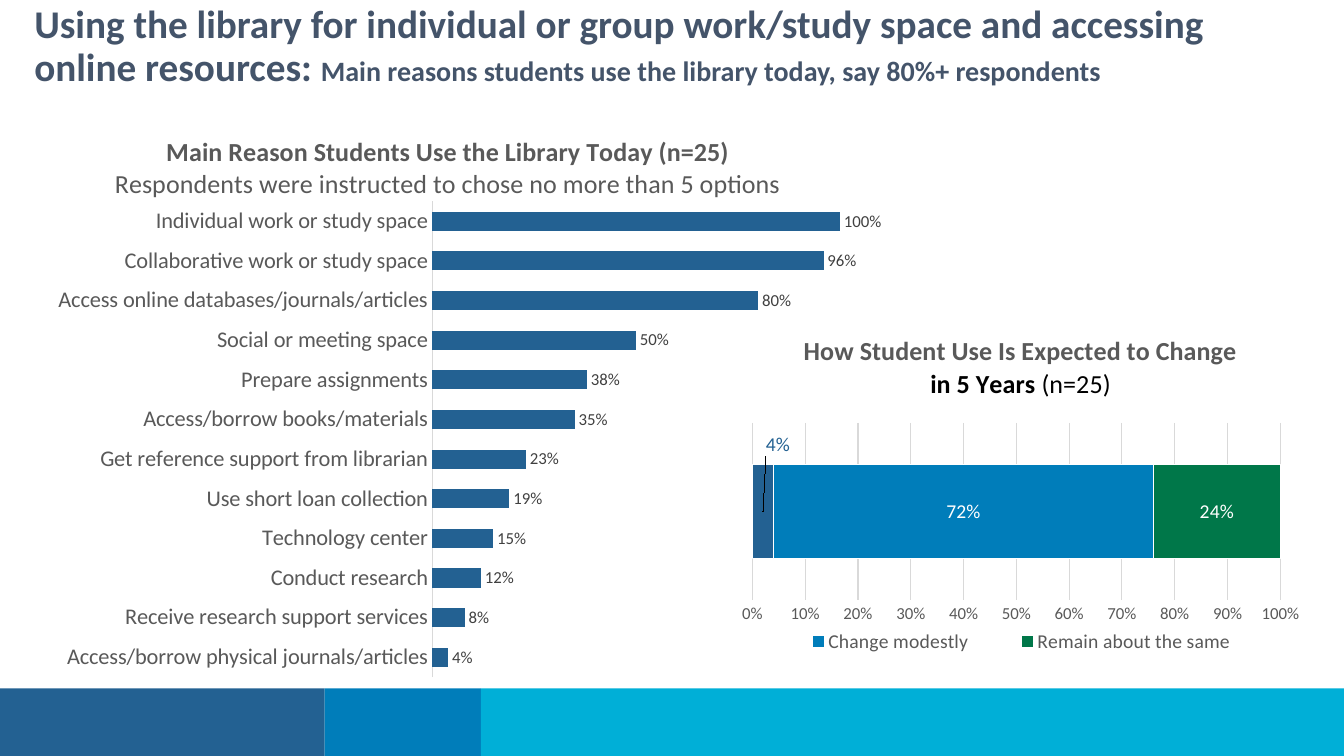
from lxml import etree
from pptx import Presentation
from pptx.chart.data import CategoryChartData
from pptx.dml.color import RGBColor
from pptx.enum.chart import XL_CHART_TYPE as ChartType, XL_LABEL_POSITION as LabelPosition
from pptx.enum.chart import XL_LEGEND_POSITION as LegendPosition, XL_TICK_MARK as TickMark
from pptx.enum.shapes import MSO_SHAPE as Shape
from pptx.enum.text import MSO_ANCHOR as Anchor, MSO_AUTO_SIZE as AutoSize, PP_ALIGN as Align
from pptx.oxml.ns import qn
from pptx.util import Inches, Pt


class Theme:
    font = "Calibri"
    navy, blue, cyan, green = "236192", "007DBA", "00AFD7", "007749"
    heading, gray, dark, rule = "44546A", "595959", "404040", "D9D9D9"
    black, white = "000000", "FFFFFF"
    title, subtitle, chart_title = 28, 20, 18.6
    category, legend, small, base = 16, 14, 12, 10
    hairline = 0.75


# Content: runs are (text, format) pairs
TITLE = [
    ("Using the library for individual or group work/study space and accessing online resources: ",
     dict(size=Theme.title, color=Theme.heading, bold=True)),
    ("Main reasons students use the library today, say 80%+ respondents",
     dict(size=Theme.subtitle, color=Theme.heading, bold=True)),
]
REASONS_TITLE = [
    [("Main Reason Students Use the Library Today (n=25)", dict(bold=True))],
    [("Respondents were instructed to chose no more than 5 options", dict(bold=False))],
]
REASONS = [
    ("Individual work or study space", 1),
    ("Collaborative work or study space", 0.96),
    ("Access online databases/journals/articles", 0.8),
    ("Social or meeting space", 0.5),
    ("Prepare assignments", 0.38),
    ("Access/borrow books/materials", 0.35),
    ("Get reference support from librarian", 0.23),
    ("Use short loan collection", 0.19),
    ("Technology center", 0.15),
    ("Conduct research", 0.12),
    ("Receive research support services", 0.08),
    ("Access/borrow physical journals/articles", 0.04),
]
CHANGE_TITLE = [
    [("How Student Use Is Expected to Change", dict(bold=True))],
    [("in 5 Years ", dict(bold=True, color=Theme.black)),
     ("(n=25)", dict(bold=False, color=Theme.black))],
]
CHANGES = [
    ("Change significantly", 0.04, Theme.navy),
    ("Change modestly", 0.72, Theme.blue),
    ("Remain about the same", 0.24, Theme.green),
]
BANDS = [(3.22, Theme.navy), (1.55, Theme.blue), (8.56, Theme.cyan)]


def style_font(font, size, color, bold=False):
    font.name = Theme.font
    font.size = Pt(size)
    font.bold = bold
    font.color.rgb = RGBColor.from_string(color)


def add_text(paragraph, text, size=Theme.chart_title, color=Theme.gray, bold=False):
    run = paragraph.add_run()
    run.text = text
    style_font(run.font, size, color, bold)


def paint(fill, color):
    fill.solid()
    fill.fore_color.rgb = RGBColor.from_string(color)


def draw_line(line, color):
    line.width = Pt(Theme.hairline)
    line.color.rgb = RGBColor.from_string(color)


def place(parent, index, **values):
    """Give a chart part a manual layout, in fractions of the chart."""
    for old in parent.findall(qn("c:layout")):
        parent.remove(old)
    layout = etree.Element(qn("c:layout"))
    manual = etree.SubElement(layout, qn("c:manualLayout"))
    for name, value in values.items():
        etree.SubElement(manual, qn("c:" + name)).set("val", str(value))
    parent.insert(index, layout)


def add_chart(slide, chart_type, box, categories, series_list, title, plot_box, gap):
    data = CategoryChartData(number_format="0%")
    data.categories = categories
    for name, values in series_list:
        data.add_series(name, values)
    chart = slide.shapes.add_chart(chart_type, *map(Inches, box), data).chart
    style_font(chart.font, Theme.base, Theme.black)
    frame = chart.chart_title.text_frame
    for number, runs in enumerate(title):
        paragraph = frame.add_paragraph() if number else frame.paragraphs[0]
        for text, options in runs:
            add_text(paragraph, text, **options)
    x, y, w, h = plot_box
    place(chart._chartSpace.find(".//" + qn("c:plotArea")), 0, layoutTarget="inner",
          xMode="edge", yMode="edge", x=x, y=y, w=w, h=h)
    chart.plots[0].gap_width = gap
    chart.plots[0].vary_by_categories = False
    chart.value_axis.minimum_scale, chart.value_axis.maximum_scale = 0, 1
    return chart


def add_labels(series, size, color, position):
    labels = series.data_labels
    labels.show_value = True
    labels.number_format, labels.number_format_is_linked = "0%", False
    labels.position = position
    style_font(labels.font, size, color)


def build_title(slide):
    title = slide.shapes.title
    title.left, title.top, title.width, title.height = map(Inches, (0.24, 0, 12.31, 1.39))
    frame = title.text_frame
    frame.word_wrap, frame.auto_size = True, AutoSize.NONE
    frame.vertical_anchor = Anchor.TOP
    paragraph = frame.paragraphs[0]
    paragraph.alignment, paragraph.line_spacing = Align.LEFT, 0.9
    for text, options in TITLE:
        add_text(paragraph, text, **options)


def build_bands(slide):
    left = 0
    for width, color in BANDS:
        band = slide.shapes.add_shape(Shape.RECTANGLE, *map(Inches, (left, 6.83, width, 0.67)))
        band.shadow.inherit = False
        paint(band.fill, color)
        band.line.fill.background()
        left += width


def build_reasons(slide):
    # Chart rows run from bottom to top
    categories, values = zip(*reversed(REASONS))
    chart = add_chart(slide, ChartType.BAR_CLUSTERED, (0, 1.13, 8.89, 5.72), categories,
                      [("Series 1", values)], REASONS_TITLE, (0.482, 0.152, 0.455, 0.825), 107)
    chart.has_legend = False
    chart.value_axis.has_major_gridlines = False
    chart.value_axis.major_unit = 0.2
    chart.value_axis.visible = False
    axis = chart.category_axis
    axis.major_tick_mark = TickMark.NONE
    style_font(axis.tick_labels.font, Theme.category, Theme.gray)
    draw_line(axis.format.line, Theme.rule)
    series = chart.series[0]
    paint(series.format.fill, Theme.navy)
    add_labels(series, Theme.small, Theme.dark, LabelPosition.OUTSIDE_END)


def build_changes(slide):
    chart = add_chart(slide, ChartType.BAR_STACKED_100, (7.25, 3.28, 5.76, 3.37), ["1"],
                      [(name, [value]) for name, value, _ in CHANGES], CHANGE_TITLE,
                      (0.037, 0.272, 0.909, 0.521), 87)
    place(chart.chart_title._element, 1, xMode="edge", yMode="edge", x=0.12, y=0)
    chart.plots[0].overlap = 100
    chart.category_axis.visible = False
    axis = chart.value_axis
    axis.major_unit = 0.1
    axis.major_tick_mark = TickMark.NONE
    axis.tick_labels.number_format, axis.tick_labels.number_format_is_linked = "0%", False
    style_font(axis.tick_labels.font, Theme.small, Theme.gray)
    axis.format.line.fill.background()
    draw_line(axis.major_gridlines.format.line, Theme.rule)
    for series, (_, _, color) in zip(chart.series, CHANGES):
        paint(series.format.fill, color)
        draw_line(series.format.line, Theme.white)
        add_labels(series, Theme.legend, Theme.white, LabelPosition.CENTER)

    # The narrow first segment has its label above the bar
    first = chart.series[0]
    style_font(first.points[0].data_label.font, Theme.legend, Theme.navy)
    place(first._element.find(".//" + qn("c:dLbl")), 1, x=0.026, y=-0.197)

    # Legend shows the two kinds of change only
    chart.has_legend = True
    legend = chart.legend
    legend.position, legend.include_in_layout = LegendPosition.BOTTOM, False
    style_font(legend.font, Theme.legend, Theme.gray)
    entry = etree.Element(qn("c:legendEntry"))
    etree.SubElement(entry, qn("c:idx")).set("val", "2")
    etree.SubElement(entry, qn("c:delete")).set("val", "1")
    legend._element.insert(1, entry)
    place(legend._element, 2, xMode="edge", yMode="edge", x=0.06, y=0.87, w=0.88, h=0.09)


def main():
    presentation = Presentation()
    presentation.slide_width, presentation.slide_height = Inches(13.33), Inches(7.5)
    slide = presentation.slides.add_slide(presentation.slide_layouts[5])
    build_bands(slide)
    build_title(slide)
    build_reasons(slide)
    build_changes(slide)
    presentation.save("out.pptx")


if __name__ == "__main__":
    main()
